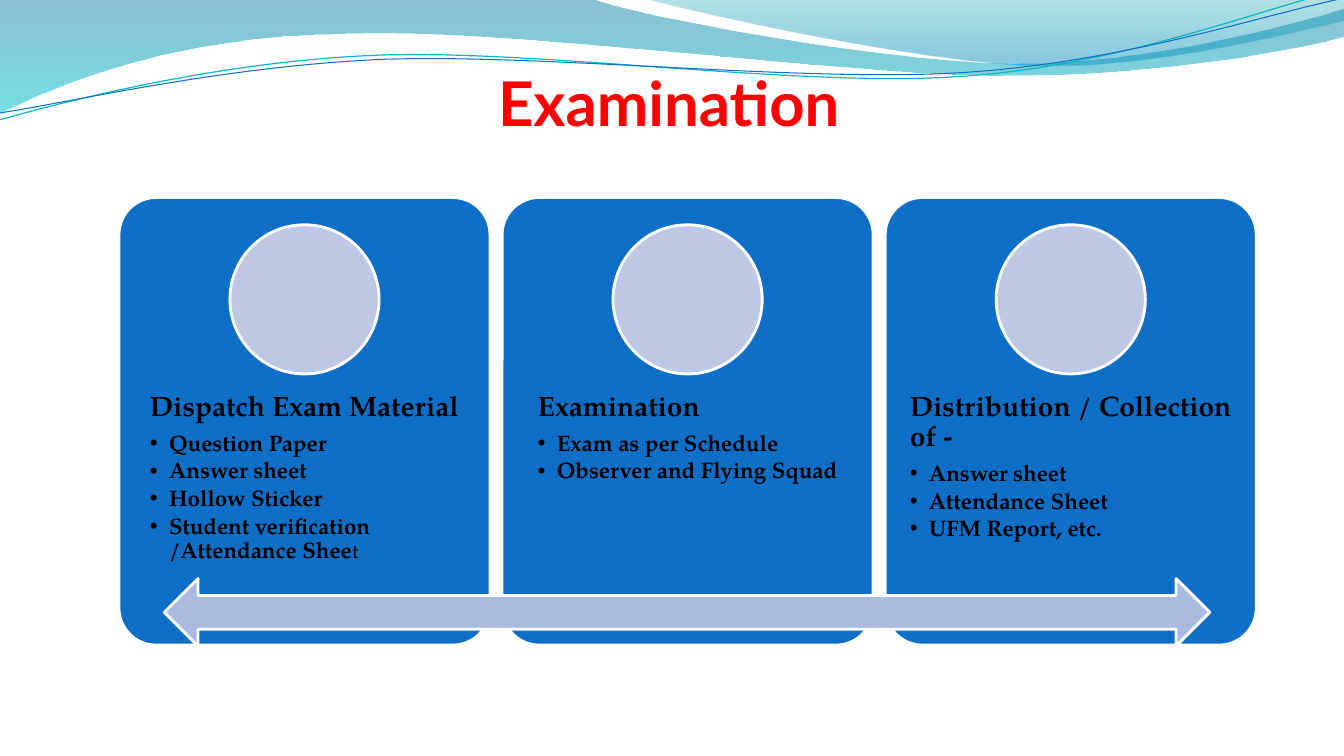
import math

from lxml import etree
from pptx import Presentation, util as u
from pptx.dml.color import RGBColor
from pptx.enum import shapes, text
from pptx.oxml.ns import qn

SHAPE = shapes.MSO_SHAPE
SERIF = "TeX Gyre Pagella"


def color(code):
    return RGBColor.from_string(code)


def turn(pt, mid, angle):
    """Rotate a point about mid; degrees, clockwise on the slide."""
    dx, dy = pt[0] - mid[0], pt[1] - mid[1]
    c, s = math.cos(math.radians(angle)), math.sin(math.radians(angle))
    return mid[0] + dx * c - dy * s, mid[1] + dx * s + dy * c


class Deck:
    def __init__(self):
        self.prs = Presentation()
        self.prs.slide_width = u.Inches(13.33)
        self.prs.slide_height = u.Inches(7.5)
        self.slide = self.prs.slides.add_slide(self.prs.slide_layouts[5])
        self.shapes = self.slide.shapes

    def outline(self, start, steps, closed):
        """Draw steps: a line (x, y) or a cubic curve (six numbers)."""
        flat = [start] + [s[i:i + 2] for s in steps for i in range(0, len(s), 2)]
        pts = [(u.Inches(x), u.Inches(y)) for x, y in flat]
        form = self.shapes.build_freeform(*pts[0])
        form.add_line_segments(pts[1:], close=closed)
        shape = form.convert_to_shape()
        shape.shadow.inherit = False
        # Join each three points of a curve into one Bezier segment
        lines = iter(list(shape._element.iter(qn("a:lnTo"))))
        for step in steps:
            first = next(lines)
            if len(step) == 6:
                first.tag = qn("a:cubicBezTo")
                for _ in range(2):
                    line = next(lines)
                    first.append(line[0])
                    line.getparent().remove(line)
        return shape

    def wave(self, start, steps, stops):
        shape = self.outline(start, steps, True)
        shape.line.fill.background()
        shape.fill.gradient()
        shape.fill.gradient_angle = 270
        for stop, (pos, code, _) in zip(shape.fill.gradient_stops, stops):
            stop.position = pos
            stop.color.rgb = color(code)
        # Opacity of each stop
        for node, (_, _, alpha) in zip(shape._element.iter(qn("a:srgbClr")), stops):
            etree.SubElement(node, qn("a:alpha"), val=str(alpha * 1000))

    def curve(self, mid, start, steps, code, width, angle=-2.7):
        pts = [[turn(s[i:i + 2], mid, -angle) for i in (0, 2, 4)] for s in steps]
        flat = [sum(trio, ()) for trio in pts]
        shape = self.outline(turn(start, mid, -angle), flat, False)
        shape.rotation = angle
        shape.fill.background()
        shape.line.color.rgb = color(code)
        shape.line.width = u.Pt(width)

    def block(self, kind, x, y, w, h, code, adj=None):
        shape = self.shapes.add_shape(kind, *map(u.Inches, (x, y, w, h)))
        shape.shadow.inherit = False
        shape.fill.solid()
        shape.fill.fore_color.rgb = color(code)
        shape.line.color.rgb = color("FFFFFF")
        shape.line.width = u.Pt(2)
        if adj is not None:
            shape.adjustments[0] = adj

    def run(self, para, words, size, font, code="000000", bold=True):
        run = para.add_run()
        run.text = words
        run.font.size = u.Pt(size)
        run.font.name = font
        run.font.bold = bold
        run.font.color.rgb = color(code)

    def title(self, words):
        box = self.shapes.title
        box.left, box.top, box.width, box.height = map(u.Inches, (0.58, 0.5, 12.11, 0.88))
        frame = box.text_frame
        frame.auto_size = text.MSO_AUTO_SIZE.NONE
        frame.vertical_anchor = text.MSO_ANCHOR.BOTTOM
        frame.margin_left = frame.margin_right = frame.margin_bottom = 0
        frame.margin_top = u.Inches(0.05)
        para = frame.paragraphs[0]
        para.alignment = text.PP_ALIGN.CENTER
        self.run(para, words, 44, "Lato", "FF0000")
        # Bring the title in front of the waves
        box._element.getparent().append(box._element)

    def label(self, x, y, w, h, head, items):
        box = self.shapes.add_textbox(*map(u.Inches, (x, y, w, h)))
        frame = box.text_frame
        frame.word_wrap = True
        frame.margin_left = frame.margin_right = u.Inches(0.16)
        frame.margin_top = frame.margin_bottom = u.Inches(0.16)
        frame._txBody.bodyPr.set("anchorCtr", "1")
        para = frame.paragraphs[0]
        para.line_spacing = 0.9
        para.space_after = u.Pt(7)
        self.run(para, head, 20, SERIF)
        for item in items:
            para = frame.add_paragraph()
            para.level = 1
            para.line_spacing = 0.9
            para.space_after = u.Pt(2.4)
            props = para._p.get_or_add_pPr()
            props.set("marL", str(u.Inches(0.19)))
            props.set("indent", str(u.Inches(-0.19)))
            etree.SubElement(props, qn("a:buFont"), typeface="Arial")
            etree.SubElement(props, qn("a:buChar"), char="•")
            main, *tail = item if isinstance(item, tuple) else (item,)
            self.run(para, main, 16, SERIF)
            for words in tail:
                self.run(para, words, 14, SERIF, bold=False)


def main():
    deck = Deck()

    # Waves along the top
    deck.wave((0, 0), [
        (5.87, -0.01), (6.34, 0.17, 8.85, 0.63, 10.11, 0.63),
        (11.38, 0.63, 12.78, 0.26, 13.33, 0.09), (13.35, 0.36),
        (13.11, 0.44, 11.6, 0.76, 9.94, 0.75), (8.29, 0.75, 5.09, 0.28, 3.43, 0.34),
        (1.72, 0.36, 0.61, 0.83, -0.01, 1.13), (0, 0),
    ], [(0, "0074A1", 45), (1, "00C6CF", 55)])
    deck.wave((6.39, -0.01), [
        (6.79, 0.11, 9.09, 0.62, 10.25, 0.65),
        (11.41, 0.69, 12.82, 0.32, 13.33, 0.21), (13.33, 0), (6.39, -0.01),
    ], [(0, "00A1A9", 30), (0.8, "008BBF", 45)])
    deck.curve((6.65, 0.58), (-0.01, 1.19), [
        (0.64, 1.01, 2.11, 0.62, 3.69, 0.55), (5.27, 0.48, 7.9, 0.87, 9.5, 0.76),
        (11.1, 0.66, 12.52, 0.08, 13.31, -0.1),
    ], "0AB8BF", 0.85)
    deck.curve((6.67, 0.59), (0, 1.12), [
        (0.63, 1.03, 2.18, 0.66, 3.78, 0.59), (5.37, 0.53, 7.96, 0.82, 9.55, 0.72),
        (11.15, 0.62, 12.55, 0.14, 13.34, -0.02),
    ], "0F6FC6", 0.75)

    deck.title("Examination")

    # Three cards at an equal pitch
    cards = [
        ("Dispatch Exam Material", [
            "Question Paper", "Answer sheet", "Hollow Sticker",
            ("Student verification /Attendance Shee", "t")]),
        ("Examination", ["Exam as per Schedule", "Observer and Flying Squad"]),
        ("Distribution / Collection of -", [
            "Answer sheet", "Attendance Sheet", "UFM Report, etc."]),
    ]
    left, pitch, wide, disc = 1.18, 3.8, 3.68, 1.48
    for i, (head, items) in enumerate(cards):
        x = left + i * pitch
        deck.block(SHAPE.ROUNDED_RECTANGLE, x, 1.96, wide, 4.44, "0F6FC6", 0.1)
        deck.label(x, 3.73, wide, 1.78, head, items)
        deck.block(SHAPE.OVAL, x + (wide - disc) / 2, 2.23, disc, disc, "BDC8E5")

    # Arrow across the cards
    deck.block(SHAPE.LEFT_RIGHT_ARROW, 1.63, 5.74, 10.37, 0.67, "ABBBDF")

    deck.prs.save("out.pptx")


if __name__ == "__main__":
    main()
